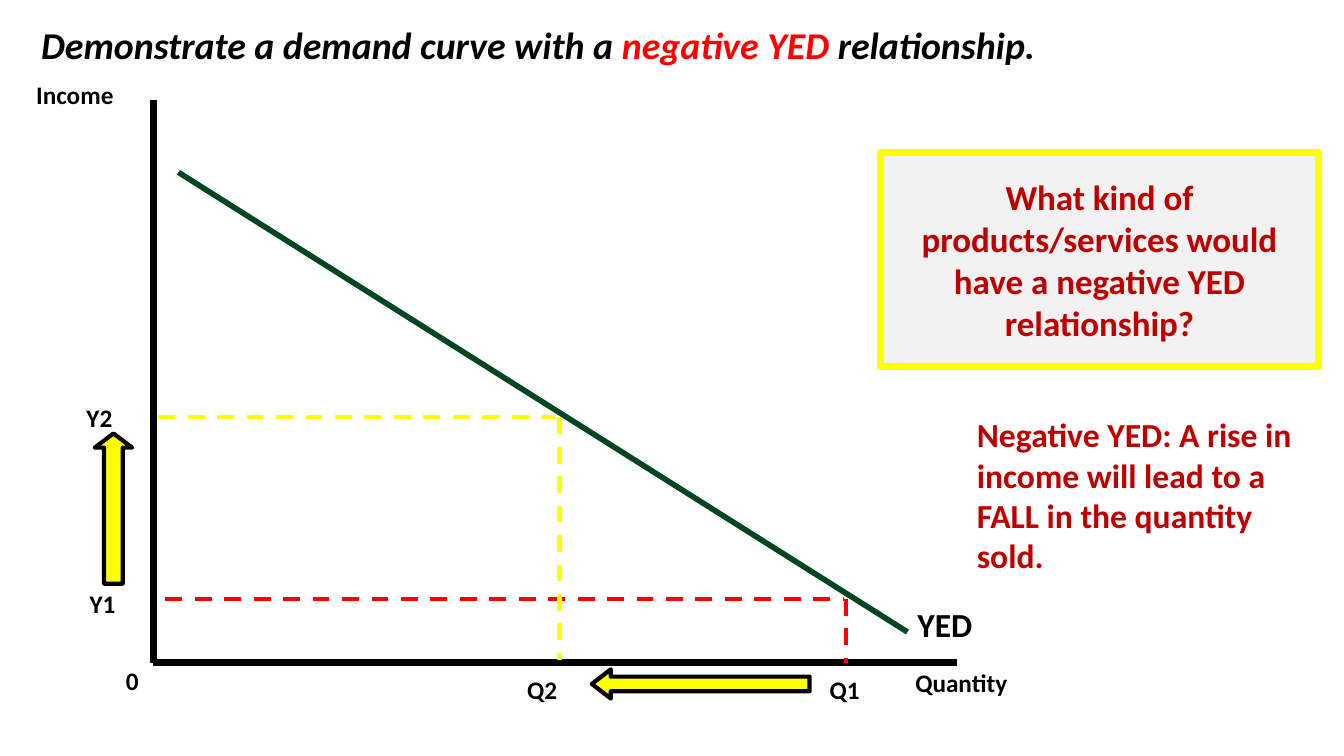
from lxml import etree
from pptx import Presentation
from pptx.dml.color import RGBColor
from pptx.enum.dml import MSO_LINE_DASH_STYLE as DASH
from pptx.enum.shapes import MSO_CONNECTOR as CONNECTOR, MSO_SHAPE as SHAPE
from pptx.enum.text import MSO_ANCHOR as ANCHOR, MSO_AUTO_SIZE as AUTO_SIZE, PP_ALIGN as ALIGN
from pptx.oxml.ns import qn
from pptx.util import Inches, Pt

COLORS = {
    "black": "000000",
    "red": "FF0000",
    "dark red": "C00000",
    "yellow": "FFFF00",
    "green": "004620",
    "grey": "F2F2F2",
}


def rgb(name):
    return RGBColor.from_string(COLORS[name])


def write(shape, parts, size, italic=False):
    frame = shape.text_frame
    frame.word_wrap = True
    para = frame.paragraphs[0]
    for text, color in parts:
        span = para.add_run()
        span.text = text
        span.font.name = "Calibri"
        span.font.size = Pt(size)
        span.font.bold = True
        span.font.italic = italic
        span.font.color.rgb = rgb(color)


deck = Presentation()
deck.slide_width = Inches(13.33)
deck.slide_height = Inches(7.5)
page = deck.slides.add_slide(deck.slide_layouts[6])

axis_x, axis_y = 1.52, 6.57
lines = [
    (axis_x, 0.99, axis_x, 6.58, "black", 5, False),
    (9.49, axis_y, axis_x, axis_y, "black", 5, False),
    (1.77, 1.71, 9, 6.27, "green", 4, False),
    (1.57, 4.14, 5.51, 4.14, "yellow", 3, True),
    (1.64, 5.94, 8.36, 5.94, "red", 3, True),
    (5.55, 4.14, 5.55, 6.55, "yellow", 3, True),
    (8.39, 5.94, 8.39, 6.58, "red", 3, True),
]
for x1, y1, x2, y2, color, width, dashed in lines:
    line = page.shapes.add_connector(
        CONNECTOR.STRAIGHT, Inches(x1), Inches(y1), Inches(x2), Inches(y2))
    line.line.color.rgb = rgb(color)
    line.line.width = Pt(width)
    if dashed:
        line.line.dash_style = DASH.DASH
    etree.SubElement(line._element.spPr, qn("a:effectLst"))

title = [
    ("Demonstrate a demand curve with a ", "black"),
    ("negative YED ", "red"),
    ("relationship.", "black"),
]
explanation = "Negative YED: A rise in income will lead to a FALL in the quantity sold."
labels = [
    (0.31, 0.17, 12.76, 0.56, title, 27, True),
    (0.26, 0.74, 2.1, 0.4, [("Income", "black")], 18, False),
    (8.98, 6.57, 2.1, 0.4, [("Quantity", "black")], 18, False),
    (1.15, 6.55, 2.1, 0.4, [("0", "black")], 18, False),
    (9, 5.94, 2.1, 0.5, [("YED", "black")], 24, False),
    (0.79, 5.79, 0.73, 0.4, [("Y1", "black")], 18, False),
    (0.76, 3.94, 0.73, 0.4, [("Y2", "black")], 18, False),
    (8.13, 6.64, 0.73, 0.4, [("Q1", "black")], 18, False),
    (5.13, 6.64, 0.73, 0.4, [("Q2", "black")], 18, False),
    (9.59, 4.06, 3.48, 1.72, [(explanation, "dark red")], 24, False),
]
for left, top, width, height, parts, size, italic in labels:
    box = page.shapes.add_textbox(Inches(left), Inches(top), Inches(width), Inches(height))
    write(box, parts, size, italic)
    box.text_frame.auto_size = AUTO_SIZE.SHAPE_TO_FIT_TEXT

question = "What kind of products/services would have a negative YED relationship?"
outlined = [
    (SHAPE.UP_ARROW, 0.94, 4.3, 0.37, 1.49, "yellow", "black", 3, (0.5, 0.38), ""),
    (SHAPE.LEFT_ARROW, 5.87, 6.64, 2.16, 0.29, "yellow", "black", 3, (0.5, 0.65), ""),
    (SHAPE.RECTANGLE, 8.73, 1.51, 4.35, 2.13, "grey", "yellow", 5, (), question),
]
for kind, left, top, width, height, fill, border, weight, adjustments, text in outlined:
    shape = page.shapes.add_shape(
        kind, Inches(left), Inches(top), Inches(width), Inches(height))
    shape.shadow.inherit = False
    shape.fill.solid()
    shape.fill.fore_color.rgb = rgb(fill)
    shape.line.color.rgb = rgb(border)
    shape.line.width = Pt(weight)
    etree.SubElement(shape._element.spPr.find(qn("a:ln")), qn("a:round"))
    for index, value in enumerate(adjustments):
        shape.adjustments[index] = value
    if text:
        write(shape, [(text, "dark red")], 25)
        shape.text_frame.vertical_anchor = ANCHOR.MIDDLE
        shape.text_frame.paragraphs[0].alignment = ALIGN.CENTER

deck.save("out.pptx")
